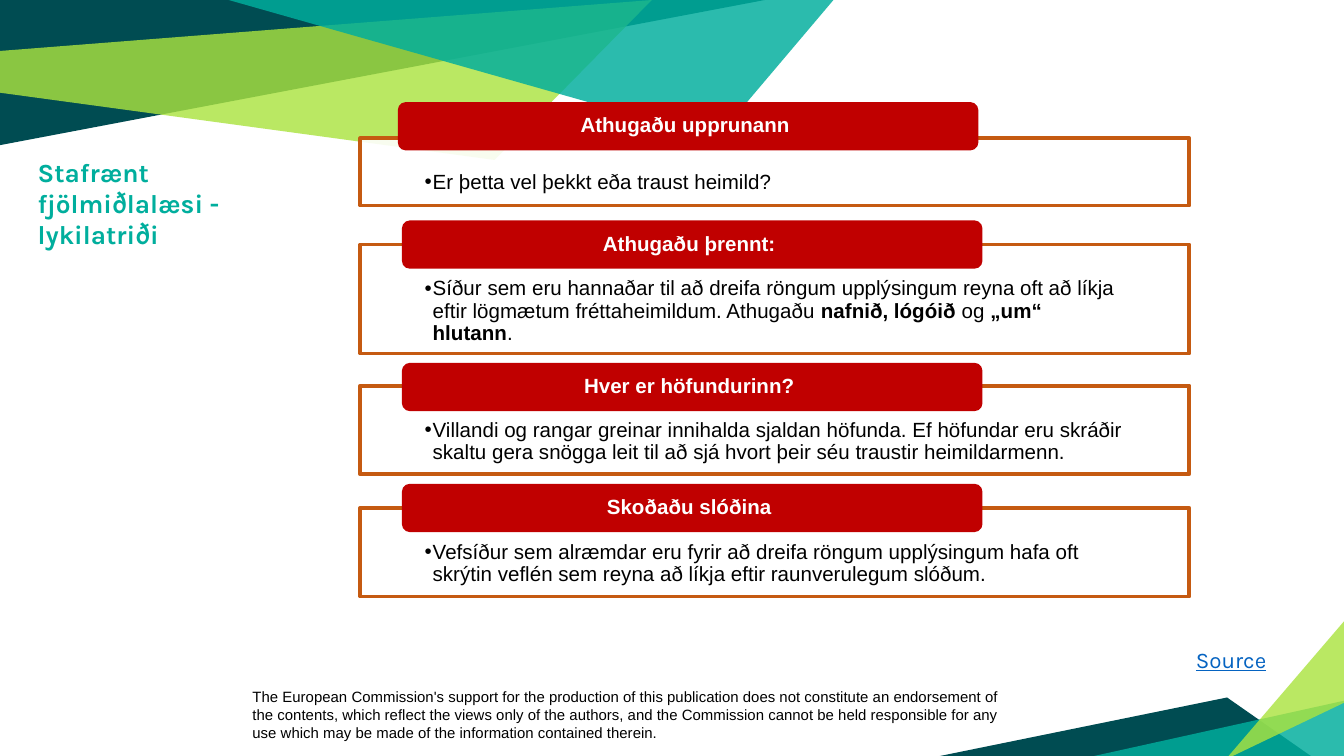
from lxml import etree
from pptx import Presentation
from pptx.dml.color import RGBColor
from pptx.enum.shapes import MSO_SHAPE as Shape
from pptx.enum.text import MSO_ANCHOR as Anchor, MSO_AUTO_SIZE as AutoSize, PP_ALIGN as Align
from pptx.oxml.ns import qn
from pptx.util import Inches, Pt

TEAL, LIME, PETROL = "00AE9D", "ABE33F", "004C52"
RED, ORANGE, BLUE = "C00000", "C55A11", "0563C1"
BLACK, WHITE = "000000", "FFFFFF"

# Colour, opacity in percent, corner points in inches
FACETS = [
    (PETROL, 100, [(0, 0), (0, 1.08), (5.69, 0)]),
    (LIME, 81, [(-0.01, 0.38), (0, 0.69), (3.68, 1.19), (4.85, 0)]),
    (PETROL, 100, [(6.97, 5.63), (9.76, 5.63), (9.13, 5.19)]),
    (TEAL, 83, [(10.02, 5.21), (10.02, 5.65), (8.03, 5.65)]),
    (LIME, 81, [(10.02, 5.22), (10.02, 4.6), (9.12, 5.65)]),
    (TEAL, 83, [(1.7, 0), (5.33, 1.03), (6.21, -0.01), (6.09, 0)]),
]

# Heading, heading left and top, panel top and height, runs as (text, bold)
TIPS = [
    ("Athugaðu upprunann ", 2.96, 0.76, 1.03, 0.5,
     [("Er þetta vel þekkt eða traust heimild?", False)]),
    ("Athugaðu þrennt: ", 2.99, 1.64, 1.82, 0.81,
     [("Síður sem eru hannaðar til að dreifa röngum upplýsingum reyna oft að líkja "
       "eftir lögmætum fréttaheimildum. Athugaðu ", False),
      ("nafnið, lógóið", True), (" og ", False), ("„um“ hlutann", True), (".", False)]),
    ("Hver er höfundurinn? ", 2.99, 2.7, 2.87, 0.66,
     [("Villandi og rangar greinar innihalda sjaldan höfunda. Ef höfundar eru skráðir "
       "skaltu gera snögga leit til að sjá hvort þeir séu traustir heimildarmenn.", False)]),
    ("Skoðaðu slóðina ", 2.99, 3.6, 3.78, 0.66,
     [("Vefsíður sem alræmdar eru fyrir að dreifa röngum upplýsingum hafa oft skrýtin "
       "veflén sem reyna að líkja eftir raunverulegum slóðum.", False)]),
]

DISCLAIMER = (
    "The European Commission's support for the production of this publication does not "
    "constitute an endorsement of the contents, which reflect the views only of the authors, "
    "and the Commission cannot be held responsible for any use which may be made of the "
    "information contained therein.")


def rgb(value):
    return RGBColor.from_string(value)


def paint(shape, color, opacity=100):
    shape.shadow.inherit = False
    shape.fill.solid()
    shape.fill.fore_color.rgb = rgb(color)
    if opacity < 100:
        tint = shape.fill._xPr.find(qn("a:solidFill"))[0]
        etree.SubElement(tint, qn("a:alpha")).set("val", str(opacity * 1000))


def add_run(paragraph, text, size, color, font="Arial", bold=False):
    run = paragraph.add_run()
    run.text = text
    run.font.name = font
    run.font.size = Pt(size)
    run.font.bold = bold
    run.font.color.rgb = rgb(color)
    return run


def set_insets(frame, left, top, right, bottom):
    frame.margin_left, frame.margin_top = Inches(left), Inches(top)
    frame.margin_right, frame.margin_bottom = Inches(right), Inches(bottom)


def add_bullet(paragraph):
    props = paragraph._p.get_or_add_pPr()
    props.set("marL", str(Inches(0.06)))
    props.set("indent", str(Inches(-0.06)))
    bullet_color = etree.SubElement(props, qn("a:buClr"))
    etree.SubElement(bullet_color, qn("a:srgbClr")).set("val", BLACK)
    etree.SubElement(props, qn("a:buFont")).set("typeface", "Arial")
    etree.SubElement(props, qn("a:buChar")).set("char", "•")


def add_facet(slide, color, opacity, corners):
    start, *rest = [(Inches(x), Inches(y)) for x, y in corners]
    builder = slide.shapes.build_freeform(*start)
    builder.add_line_segments(rest, close=True)
    facet = builder.convert_to_shape()
    paint(facet, color, opacity)
    facet.line.fill.background()


def add_panel(slide, top, height, runs):
    panel = slide.shapes.add_shape(
        Shape.RECTANGLE, Inches(2.68), Inches(top), Inches(6.17), Inches(height))
    paint(panel, WHITE, 90)
    panel.line.color.rgb = rgb(ORANGE)
    panel.line.width = Pt(2)
    frame = panel.text_frame
    frame.word_wrap = True
    frame.vertical_anchor = Anchor.TOP
    set_insets(frame, 0.48, 0.25, 0.48, 0.09)
    paragraph = frame.paragraphs[0]
    add_bullet(paragraph)
    paragraph.alignment = Align.LEFT
    paragraph.line_spacing = 0.9
    for text, bold in runs:
        add_run(paragraph, text, 11, BLACK, bold=bold)


def add_heading(slide, left, top, text):
    heading = slide.shapes.add_shape(
        Shape.ROUNDED_RECTANGLE, Inches(left), Inches(top), Inches(4.32), Inches(0.36))
    paint(heading, RED)
    heading.line.fill.background()
    frame = heading.text_frame
    frame.word_wrap = True
    frame.vertical_anchor = Anchor.MIDDLE
    set_insets(frame, 0.16, 0, 0.16, 0)
    paragraph = frame.paragraphs[0]
    paragraph.alignment = Align.CENTER
    paragraph.line_spacing = 0.9
    add_run(paragraph, text, 11, WHITE, bold=True)


def add_label(slide, left, top, width, height, text, size, color, font="Arial", wrap=True):
    box = slide.shapes.add_textbox(Inches(left), Inches(top), Inches(width), Inches(height))
    box.text_frame.word_wrap = wrap
    return add_run(box.text_frame.paragraphs[0], text, size, color, font)


def set_title(slide, text):
    title = slide.shapes.title
    title.left, title.top = Inches(0.18), Inches(1.11)
    title.width, title.height = Inches(2.28), Inches(1.04)
    frame = title.text_frame
    frame.word_wrap = True
    frame.auto_size = AutoSize.NONE
    frame.vertical_anchor = Anchor.TOP
    paragraph = frame.paragraphs[0]
    paragraph.alignment = Align.LEFT
    add_run(paragraph, text, 14, TEAL, "Karla", bold=True)


def main():
    deck = Presentation()
    deck.slide_width = Inches(10)
    deck.slide_height = deck.slide_width * 9 // 16
    slide = deck.slides.add_slide(deck.slide_layouts[5])

    add_label(slide, 1.78, 5.07, 5.79, 0.5, DISCLAIMER, 8, BLACK)
    for facet in FACETS:
        add_facet(slide, *facet)
    for heading, left, heading_top, panel_top, height, runs in TIPS:
        add_panel(slide, panel_top, height, runs)
        add_heading(slide, left, heading_top, heading)
    set_title(slide, "Stafrænt fjölmiðlalæsi - lykilatriði")
    source = add_label(slide, 8.8, 4.76, 0.73, 0.3, "Source", 12, BLUE, "Karla", wrap=False)
    source.font.underline = True

    deck.save("out.pptx")


if __name__ == "__main__":
    main()
